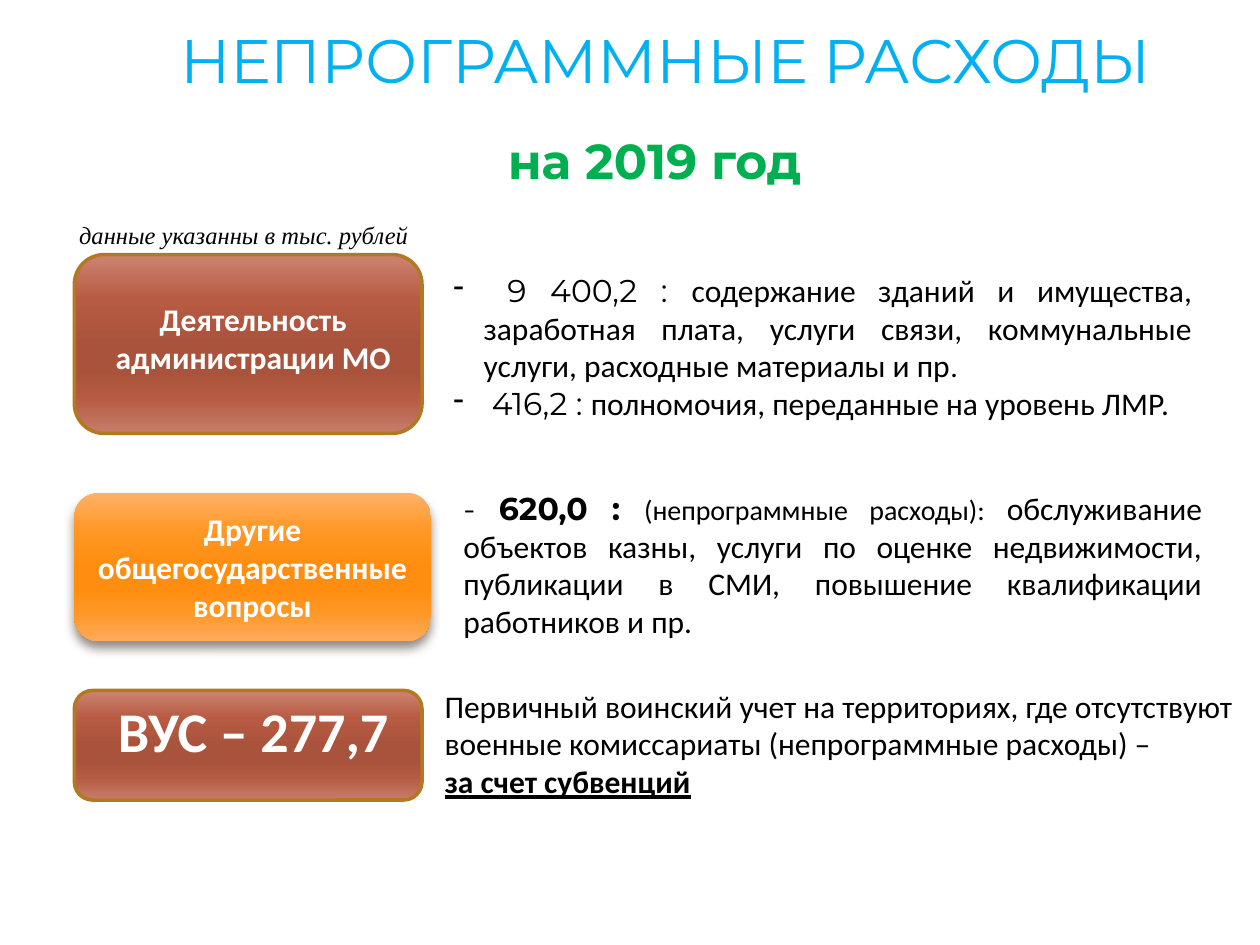
from lxml import etree
from pptx import Presentation
from pptx.dml.color import RGBColor
from pptx.enum import shapes, text
from pptx.oxml import parse_xml
from pptx.oxml.ns import nsdecls, qn
from pptx.util import Inches, Pt

BLACK = RGBColor(0, 0, 0)
WHITE = RGBColor(0xFF, 0xFF, 0xFF)
BLUE = RGBColor(0x00, 0xB0, 0xF0)
GREEN = RGBColor(0x00, 0xB0, 0x50)
GOLD = RGBColor(0xB2, 0x78, 0x22)
RED_RAMP = "CD8472 B75B42 AA533C AA533C B65B42 C77D6B"
ORANGE_RAMP = "FFB16A FF9826 FF8D0F FF8D0F FF9724 FFAA5C"
STOPS = 0, 25, 50, 65, 80, 100
CAL, MONT = "Calibri", "Montserrat"
LEFT, CENTER, RIGHT, JUST = (
    text.PP_ALIGN.LEFT, text.PP_ALIGN.CENTER, text.PP_ALIGN.RIGHT, text.PP_ALIGN.JUSTIFY)

prs = Presentation()
prs.slide_width, prs.slide_height = Inches(10), Inches(7.5)
slide = prs.slides.add_slide(prs.slide_layouts[6])


def write(frame, paras, align, color=BLACK, bullet=False):
    """Fill a frame; each run is (words, font, size, styles), styles from 'b', 'i', 'u'."""
    frame.word_wrap = True
    for i, runs in enumerate(paras):
        para = frame.paragraphs[0] if i == 0 else frame.add_paragraph()
        para.alignment = align
        if bullet:
            props = para._p.get_or_add_pPr()
            props.set("marL", str(Inches(0.24)))
            props.set("indent", str(-Inches(0.24)))
            etree.SubElement(props, qn("a:buChar")).set("char", "-")
        for words, face, size, style in runs:
            run = para.add_run()
            run.text = words
            font = run.font
            font.name, font.size, font.color.rgb = face, Pt(size), color
            font.bold, font.italic, font.underline = (s in style for s in "biu")


def add_card(top, width, height, ramp):
    card = slide.shapes.add_shape(
        shapes.MSO_SHAPE.ROUNDED_RECTANGLE,
        Inches(0.59), Inches(top), Inches(width), Inches(height))
    card.shadow.inherit = False
    card.fill.gradient()
    card.fill.gradient_angle = 270
    stops = card._element.spPr.find(qn("a:gradFill")).find(qn("a:gsLst"))
    for old in list(stops):
        stops.remove(old)
    for pos, tint in zip(STOPS, ramp.split()):
        stop = etree.SubElement(stops, qn("a:gs"), pos=str(pos * 1000))
        etree.SubElement(stop, qn("a:srgbClr"), val=tint)
    return card


# Cards
for top, height in ((2.02, 1.42), (5.48, 0.87)):
    card = add_card(top, 2.76, height, RED_RAMP)
    card.line.color.rgb = GOLD
    card.line.width = Pt(2)

card = add_card(3.91, 2.83, 1.18, ORANGE_RAMP)
card.line.fill.background()
card._element.spPr.find(qn("a:effectLst")).append(parse_xml(
    f'<a:outerShdw {nsdecls("a")} blurRad="{Pt(6)}" dist="{Pt(4)}" dir="5400000" '
    'rotWithShape="0"><a:srgbClr val="4E3B30"><a:alpha val="60000"/></a:srgbClr></a:outerShdw>'))
card.text_frame.vertical_anchor = text.MSO_ANCHOR.MIDDLE
write(card.text_frame, [[("Другие общегосударственные вопросы", CAL, 18, "b")]], CENTER, WHITE)

# Headings, card labels and descriptions: place, paragraphs, alignment, colour, bullet
boxes = [
    ((0.91, 0.13, 8.74, 0.94),
     [[("НЕПРОГРАММНЫЕ РАСХОДЫ", MONT, 35.1, "")]], CENTER, BLUE, False),
    ((0.98, 0.99, 8.43, 0.57),
     [[("на 2019 год", MONT, 28, "b")]], CENTER, GREEN, False),
    ((0.35, 1.7, 2.99, 0.34),
     [[("данные указанны в тыс. рублей", "Times New Roman", 14, "i")]], RIGHT, BLACK, False),
    ((0.75, 2.33, 2.52, 0.71),
     [[("Деятельность администрации МО", CAL, 18, "b")]], CENTER, WHITE, False),
    ((0.75, 5.48, 2.52, 0.64),
     [[("ВУС – 277,7", CAL, 32, "b")]], CENTER, WHITE, False),
    ((3.5, 2.1, 6.06, 1.62),
     [[(" 9 400,2 : ", MONT, 18, ""),
       ("содержание зданий и имущества, заработная плата, услуги связи, "
        "коммунальные услуги, расходные материалы и пр", CAL, 18, ""),
       (".", "Roboto", 18, "")],
      [(" 416,2 : ", MONT, 18, ""),
       ("полномочия, переданные на уровень ЛМР.", CAL, 18, "")]], JUST, BLACK, True),
    ((3.58, 3.83, 6.06, 1.31),
     [[("- ", MONT, 18, ""),
       ("620,0 : ", MONT, 18, "b"),
       ("(непрограммные расходы): ", CAL, 16, ""),
       ("обслуживание объектов казны, услуги по оценке недвижимости, "
        "публикации в СМИ, повышение квалификации работников и пр.", CAL, 18, "")]],
     JUST, BLACK, False),
    ((3.43, 5.4, 6.57, 1.01),
     [[("Первичный воинский учет на территориях, где отсутствуют "
        "военные комиссариаты (непрограммные расходы) –", CAL, 18, "")],
      [("за счет субвенций", CAL, 18, "bu")]], LEFT, BLACK, False),
]
for place, paras, align, color, bullet in boxes:
    box = slide.shapes.add_textbox(*map(Inches, place))
    write(box.text_frame, paras, align, color, bullet)

prs.save("out.pptx")
